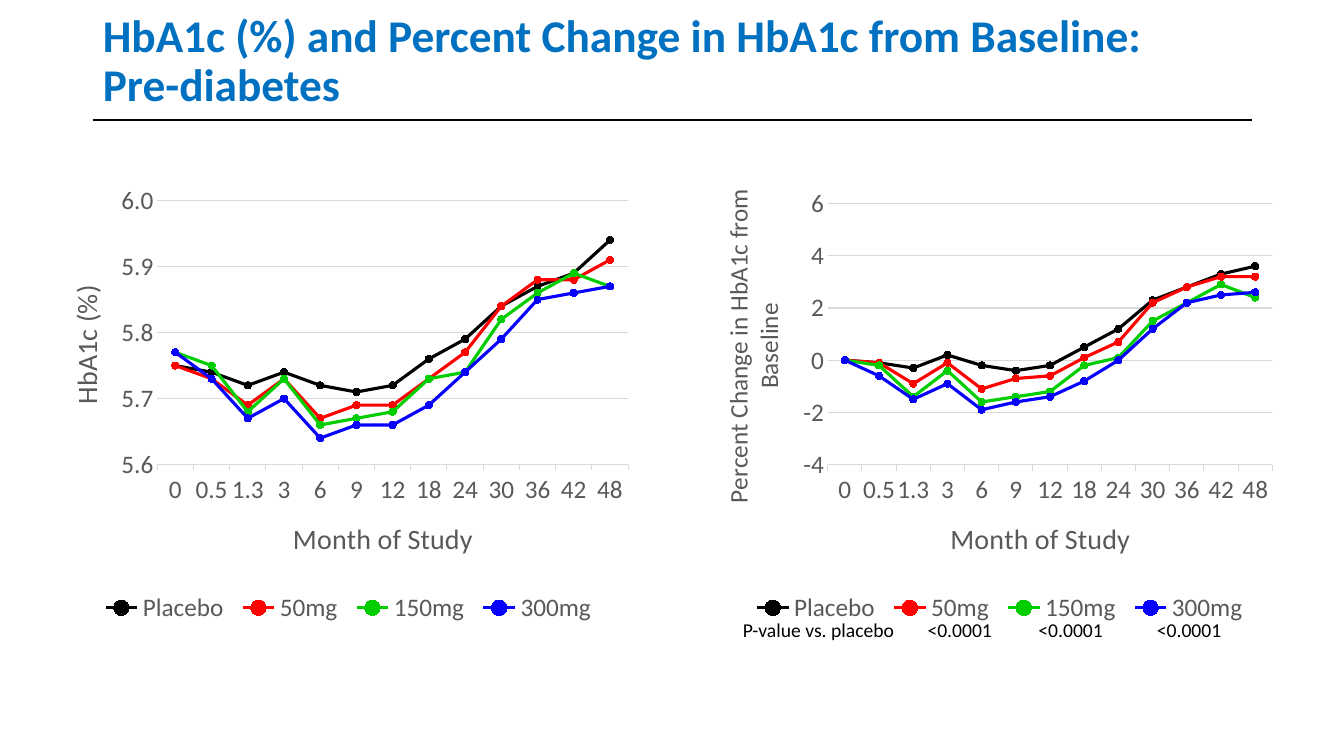
from typing import NamedTuple

from lxml.etree import SubElement
from pptx import Presentation
from pptx.chart.data import CategoryChartData
from pptx.dml.color import RGBColor
from pptx.enum.chart import (XL_AXIS_CROSSES, XL_CHART_TYPE, XL_LEGEND_POSITION,
                             XL_MARKER_STYLE, XL_TICK_LABEL_POSITION, XL_TICK_MARK)
from pptx.enum.shapes import MSO_CONNECTOR
from pptx.enum.text import MSO_ANCHOR, PP_ALIGN
from pptx.oxml.ns import qn
from pptx.util import Inches, Pt

FONT = "Calibri"
BLACK, BLUE, GREY, GRID = "000000", "0070C0", "595959", "D9D9D9"
NO_TABLE_STYLE = "{2D5ABB26-0587-4C30-8999-92F81FD0307C}"
MONTHS = ["0", "0.5", "1.3", "3", "6", "9", "12", "18", "24", "30", "36", "42", "48"]
DOSE_COLORS = {"Placebo": BLACK, "50mg": "FF0100", "150mg": "02CD00", "300mg": "0700FF"}
HBA1C = [
    [5.75, 5.74, 5.72, 5.74, 5.72, 5.71, 5.72, 5.76, 5.79, 5.84, 5.87, 5.89, 5.94],
    [5.75, 5.73, 5.69, 5.73, 5.67, 5.69, 5.69, 5.73, 5.77, 5.84, 5.88, 5.88, 5.91],
    [5.77, 5.75, 5.68, 5.73, 5.66, 5.67, 5.68, 5.73, 5.74, 5.82, 5.86, 5.89, 5.87],
    [5.77, 5.73, 5.67, 5.7, 5.64, 5.66, 5.66, 5.69, 5.74, 5.79, 5.85, 5.86, 5.87],
]
PERCENT_CHANGE = [
    [0, -0.1, -0.3, 0.2, -0.2, -0.4, -0.2, 0.5, 1.2, 2.3, 2.8, 3.3, 3.6],
    [0, -0.1, -0.9, -0.1, -1.1, -0.7, -0.6, 0.1, 0.7, 2.2, 2.8, 3.2, 3.2],
    [0, -0.2, -1.4, -0.4, -1.6, -1.4, -1.2, -0.2, 0.1, 1.5, 2.2, 2.9, 2.4],
    [0, -0.6, -1.5, -0.9, -1.9, -1.6, -1.4, -0.8, 0, 1.2, 2.2, 2.5, 2.6],
]
# Column width in inches, text, alignment
P_VALUE_COLUMNS = [
    (1.37, "", PP_ALIGN.CENTER),
    (2.24, " P-value vs. placebo", PP_ALIGN.RIGHT),
    (1.1, "<0.0001", PP_ALIGN.CENTER),
    (1.1, "<0.0001", PP_ALIGN.CENTER),
    (1.25, "<0.0001", PP_ALIGN.CENTER),
    (1.83, "", PP_ALIGN.CENTER),
]


class Box(NamedTuple):
    """An area of the slide, in inches; a title sizes itself and needs no width or height."""
    left: float
    top: float
    width: float = 0
    height: float = 0


class Scale(NamedTuple):
    number_format: str
    low: float
    high: float
    step: float


class AxisTitle(NamedTuple):
    text: str
    size: float
    box: Box


def rgb(color):
    return RGBColor.from_string(color)


def set_font(font, size, color, bold=False):
    font.name, font.size, font.bold = FONT, Pt(size), bold
    font.color.rgb = rgb(color)


def set_line(line, color, width):
    line.color.rgb = rgb(color)
    line.width = Pt(width)


def place(part, frame, box):
    """Fix a title, legend or plot area (XML element) at a slide area within the chart frame."""
    for automatic in part.findall(qn("c:layout")):
        part.remove(automatic)
    layout = part.makeelement(qn("c:layout"))
    manual = SubElement(layout, qn("c:manualLayout"))
    settings = {"layoutTarget": "inner"} if part.tag == qn("c:plotArea") else {}
    settings.update(xMode="edge", yMode="edge",
                    x=(box.left - frame.left) / frame.width,
                    y=(box.top - frame.top) / frame.height)
    if box.width:
        settings.update(w=box.width / frame.width, h=box.height / frame.height)
    for name, value in settings.items():
        SubElement(manual, qn(f"c:{name}")).set("val", str(value))
    # The schema wants the layout right after the title text or the legend position.
    leading = [child for child in part if child.tag in (qn("c:tx"), qn("c:legendPos"))]
    part.insert(len(leading), layout)


def title_axis(axis, title, frame):
    text_frame = axis.axis_title.text_frame
    text_frame.text = title.text
    set_font(text_frame.paragraphs[0].font, title.size, GREY)
    place(axis.axis_title.element, frame, title.box)


def format_axes(chart, scale):
    months, values = chart.category_axis, chart.value_axis
    for axis in (months, values):
        set_font(axis.tick_labels.font, 18, GREY)
        axis.minor_tick_mark = XL_TICK_MARK.NONE
    months.major_tick_mark = XL_TICK_MARK.OUTSIDE
    months.tick_label_position = XL_TICK_LABEL_POSITION.LOW
    set_line(months.format.line, GRID, 0.75)

    values.major_tick_mark = XL_TICK_MARK.NONE
    values.format.line.fill.background()
    set_line(values.major_gridlines.format.line, GRID, 0.75)
    values.tick_labels.number_format = scale.number_format
    values.tick_labels.number_format_is_linked = False
    values.minimum_scale, values.maximum_scale = scale.low, scale.high
    values.major_unit = scale.step
    values.crosses = XL_AXIS_CROSSES.MINIMUM
    # Points sit on the tick marks, so the first month starts at the axis.
    for crossing in chart.element.iter(qn("c:crossBetween")):
        crossing.set("val", "midCat")


def format_doses(plot):
    plot.vary_by_categories = False
    for series, color in zip(plot.series, DOSE_COLORS.values()):
        series.smooth = False
        set_line(series.format.line, color, 2.25)
        marker = series.marker
        marker.style, marker.size = XL_MARKER_STYLE.CIRCLE, 5
        marker.format.fill.solid()
        marker.format.fill.fore_color.rgb = rgb(color)
        marker.format.line.color.rgb = rgb(color)


def add_legend(chart, frame):
    chart.has_legend = True
    legend = chart.legend
    legend.position = XL_LEGEND_POSITION.BOTTOM
    legend.include_in_layout = False
    set_font(legend.font, 18, GREY)
    place(chart.element.find(f".//{qn('c:legend')}"), frame,
          Box(frame.left + 0.48, 5.86, 5.03, 0.4))


def add_dose_chart(slide, frame, plot_box, doses, scale, value_title):
    data = CategoryChartData()
    data.categories = MONTHS
    for dose, values in zip(DOSE_COLORS, doses):
        data.add_series(dose, values)
    chart = slide.shapes.add_chart(XL_CHART_TYPE.LINE_MARKERS, *map(Inches, frame), data).chart
    chart.has_title = False
    set_font(chart.font, 10, BLACK)
    place(chart.element.find(f".//{qn('c:plotArea')}"), frame, plot_box)
    format_axes(chart, scale)
    month_title_left = plot_box.left + plot_box.width / 2 - 1.04
    month_title = AxisTitle("Month of Study", 20, Box(month_title_left, 5.1))
    title_axis(chart.category_axis, month_title, frame)
    title_axis(chart.value_axis, value_title, frame)
    format_doses(chart.plots[0])
    add_legend(chart, frame)


def add_title(slide):
    title = slide.shapes.title
    title.left, title.top, title.width, title.height = map(Inches, (0.92, 0.14, 11.5, 0.95))
    title.text_frame.text = "HbA1c (%) and Percent Change in HbA1c from Baseline: \vPre-diabetes"
    title.text_frame.vertical_anchor = MSO_ANCHOR.MIDDLE
    heading = title.text_frame.paragraphs[0]
    heading.alignment, heading.line_spacing = PP_ALIGN.LEFT, 0.9
    set_font(heading.font, 32.4, BLUE, bold=True)


def add_title_rule(slide):
    rule = slide.shapes.add_connector(
        MSO_CONNECTOR.STRAIGHT, *map(Inches, (0.92, 1.19, 12.42, 1.19)))
    set_line(rule.line, BLACK, 1.5)
    SubElement(rule.element.spPr, qn("a:effectLst"))


def add_p_values(slide):
    frame = slide.shapes.add_table(
        1, len(P_VALUE_COLUMNS), *map(Inches, (5.36, 6.05, 8.89, 0.41)))
    frame.element.find(f".//{qn('a:tableStyleId')}").text = NO_TABLE_STYLE
    table = frame.table
    table.first_row = table.horz_banding = False
    for index, (width, text, alignment) in enumerate(P_VALUE_COLUMNS):
        table.columns[index].width = Inches(width)
        cell = table.cell(0, index)
        cell.fill.background()
        cell.vertical_anchor = MSO_ANCHOR.MIDDLE
        cell.text = text
        entry = cell.text_frame.paragraphs[0]
        entry.alignment = alignment
        set_font(entry.font, 14, BLACK)


def main():
    deck = Presentation()
    deck.slide_width, deck.slide_height = Inches(13.33), Inches(7.5)
    slide = deck.slides.add_slide(deck.slide_layouts[5])
    add_title_rule(slide)
    add_title(slide)
    add_dose_chart(
        slide, Box(6.92, 1.78, 5.94, 4.47), Box(8.21, 2.02, 4.41, 2.59),
        PERCENT_CHANGE, Scale("#,##0", -4, 6, 2),
        AxisTitle("Percent Change in HbA1c from Baseline", 18, Box(7.1, 1.83)))
    add_dose_chart(
        slide, Box(0.46, 1.75, 6.01, 4.5), Box(1.56, 1.99, 4.67, 2.62),
        HBA1C, Scale("#,##0.0", 5.6, 6, 0.1),
        AxisTitle("HbA1c (%)", 20, Box(0.61, 2.78)))
    add_p_values(slide)
    deck.save("out.pptx")


if __name__ == "__main__":
    main()
